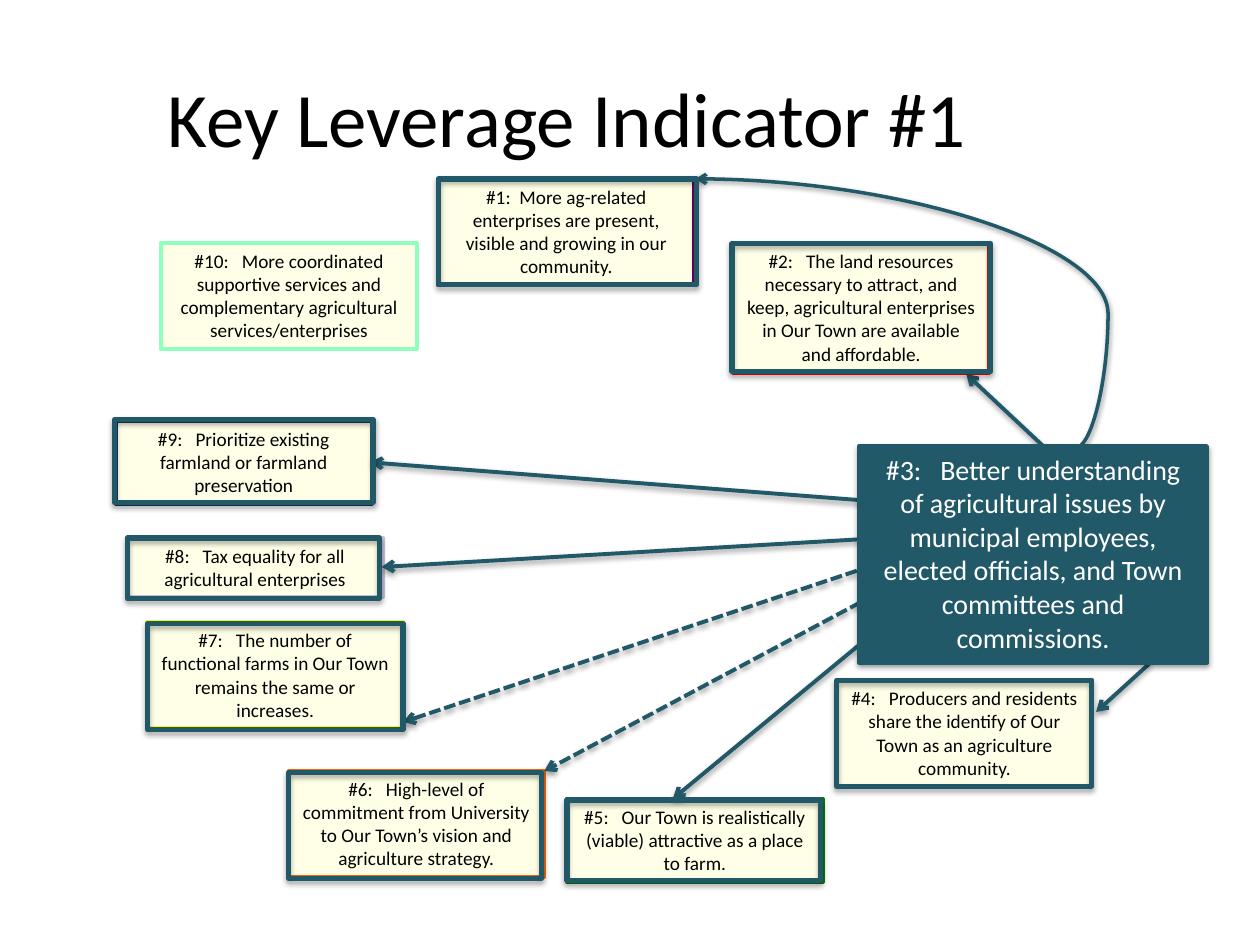
from dataclasses import dataclass
from lxml import etree
from pptx import Presentation
from pptx.dml.color import RGBColor
from pptx.enum.dml import MSO_LINE
from pptx.enum.shapes import MSO_CONNECTOR, MSO_SHAPE
from pptx.enum.text import MSO_ANCHOR, MSO_AUTO_SIZE, PP_ALIGN
from pptx.oxml.ns import qn
from pptx.util import Pt

RECT = MSO_SHAPE.RECTANGLE
LINE, CURVE = MSO_CONNECTOR.STRAIGHT, MSO_CONNECTOR.CURVE
DASH = MSO_LINE.SQUARE_DOT
CENTER, TOP, MIDDLE = PP_ALIGN.CENTER, MSO_ANCHOR.TOP, MSO_ANCHOR.MIDDLE
GROW = MSO_AUTO_SIZE.SHAPE_TO_FIT_TEXT


@dataclass(frozen=True)
class Theme:
    font: str = "Calibri"
    ink: str = "000000"
    white: str = "FFFFFF"
    cream: str = "FFFFCC"
    teal: str = "215968"
    title: int = 44
    key: int = 16
    note: int = 11
    thin: float = 2
    mid: float = 2.25
    bold: float = 3


THEME = Theme()
SCALE = 9144
SIZE = (1000, 750)
WIDE = 203

TITLE = ("Key Leverage Indicator #1", (0, 30, 900, 125))
KEY = ("#3:   Better understanding of agricultural issues by municipal employees, "
       "elected officials, and Town committees and commissions.", (682, 354, 276, 172))

# text, left, top, height, edge, frame
NOTES = [
    ("#1:  More ag-related enterprises are present, visible and growing in our community.",
     348, 142, 84, "660066", (348, 142, 205, 84)),
    ("#2:   The land resources necessary to attract, and keep, agricultural enterprises "
     "in Our Town are available and affordable.",
     582, 193, 103, "FF0000", (581, 193, 205, 102)),
    ("#4:   Producers and residents share the identify of Our Town as an agriculture community.",
     664, 540, 84, "FF1BB5", (664, 540, 202, 84)),
    ("#5:   Our Town is realistically (viable) attractive as a place to farm.",
     450, 634, 66, "008000", (450, 635, 201, 64)),
    ("#6:   High-level of commitment from University to Our Town’s vision "
     "and agriculture strategy.",
     229, 612, 84, "FF6600", (229, 613, 201, 84)),
    ("#7:   The number of functional farms in Our Town remains the same or increases.",
     117, 494, 84, "FFFF00", (117, 495, 203, 84)),
    ("#8:   Tax equality for all agricultural enterprises",
     101, 427, 47, "CCC1DA", (101, 427, 200, 48)),
    ("#9:   Prioritize existing farmland or farmland preservation",
     92, 334, 66, "17375E", (91, 333, 205, 66)),
    ("#10:   More coordinated supportive services and complementary "
     "agricultural services/enterprises",
     128, 193, 84, "8EFFBC", None),
]

ARROWS = [
    (LINE, (913, 526, 870, 565), None),
    (CURVE, (853, 356, 552, 142), None),
    (LINE, (695, 501, 534, 634), None),
    (LINE, (683, 478, 432, 612), DASH),
    (LINE, (680, 453, 320, 573), DASH),
    (LINE, (683, 428, 303, 450), None),
    (LINE, (683, 397, 294, 367), None),
    (LINE, (830, 356, 767, 297), None),
]
BEND = -8800


def emu(spots):
    return [spot * SCALE for spot in spots]


def node(root, tag, **attrs):
    return etree.SubElement(root, qn(tag), {k: str(v) for k, v in attrs.items()})


def shade(item, alpha=None, drop=0):
    group = node(item._element.spPr, "a:effectLst")
    if alpha:
        cast = node(group, "a:outerShdw", blurRad=40000, dist=drop, dir=5400000, rotWithShape=0)
        tint = node(cast, "a:srgbClr", val=THEME.ink)
        node(tint, "a:alpha", val=alpha * 1000)


def stroke(item, color, width):
    item.line.color.rgb = RGBColor.from_string(color)
    item.line.width = Pt(width)


def write(item, text, size, color, anchor=TOP):
    frame = item.text_frame
    frame.word_wrap = True
    frame.vertical_anchor = anchor
    para = frame.paragraphs[0]
    para.alignment = CENTER
    run = para.add_run()
    run.text = text
    run.font.name = THEME.font
    run.font.size = Pt(size)
    run.font.color.rgb = RGBColor.from_string(color)


def box(shapes, area, edge, width, fill=None, alpha=None):
    item = shapes.add_shape(RECT, *emu(area))
    if fill:
        item.fill.solid()
        item.fill.fore_color.rgb = RGBColor.from_string(fill)
    else:
        item.fill.background()
    if alpha:
        tint = item._element.spPr.find(qn("a:solidFill")).find(qn("a:srgbClr"))
        node(tint, "a:alpha", val=alpha * 1000)
    stroke(item, edge, width)
    return item


def arrow(shapes, kind, ends, dash):
    item = shapes.add_connector(kind, *emu(ends))
    stroke(item, THEME.teal, THEME.thin if kind == CURVE else THEME.mid)
    if dash:
        item.line.dash_style = dash
    props = item._element.spPr
    node(props.find(qn("a:ln")), "a:tailEnd", type="arrow")
    if kind == CURVE:
        guide = props.find(qn("a:prstGeom")).find(qn("a:avLst"))
        node(guide, "a:gd", name="adj1", fmla=f"val {BEND}")
    shade(item, 38, 20000)


def main():
    deck = Presentation()
    deck.slide_width, deck.slide_height = emu(SIZE)
    shapes = deck.slides.add_slide(deck.slide_layouts[6]).shapes

    for text, left, top, high, edge, _ in NOTES:
        note = box(shapes, (left, top, WIDE, high), edge, THEME.mid, THEME.cream, 44)
        shade(note)
        write(note, text, THEME.note, THEME.ink)
        note.text_frame.auto_size = GROW

    for kind, ends, dash in ARROWS:
        arrow(shapes, kind, ends, dash)

    text, area = TITLE
    write(shapes.add_textbox(*emu(area)), text, THEME.title, THEME.ink, MIDDLE)

    text, area = KEY
    key = box(shapes, area, THEME.teal, THEME.mid, THEME.teal)
    shade(key, 38, 20000)
    write(key, text, THEME.key, THEME.white)
    key.text_frame.auto_size = GROW

    for *_, area in NOTES:
        if area:
            shade(box(shapes, area, THEME.teal, THEME.bold), 35, 23000)

    deck.save("out.pptx")


if __name__ == "__main__":
    main()
